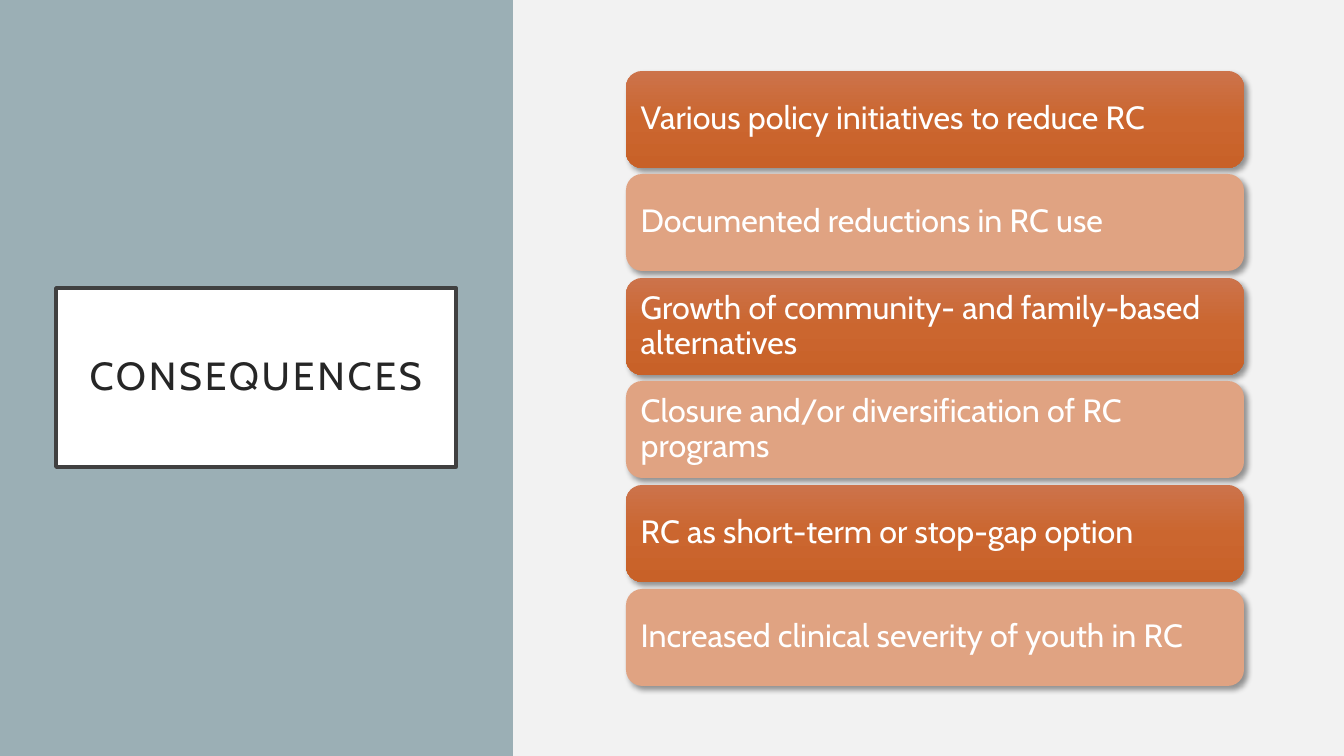
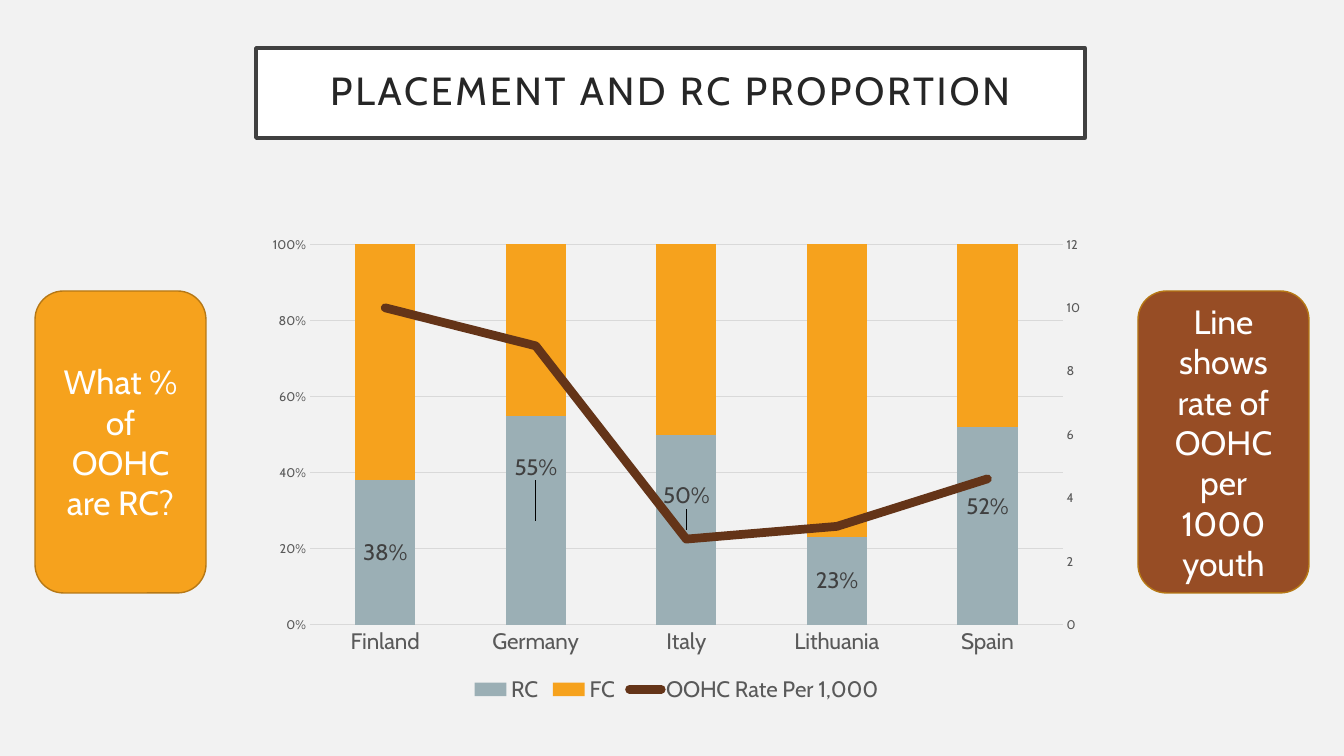
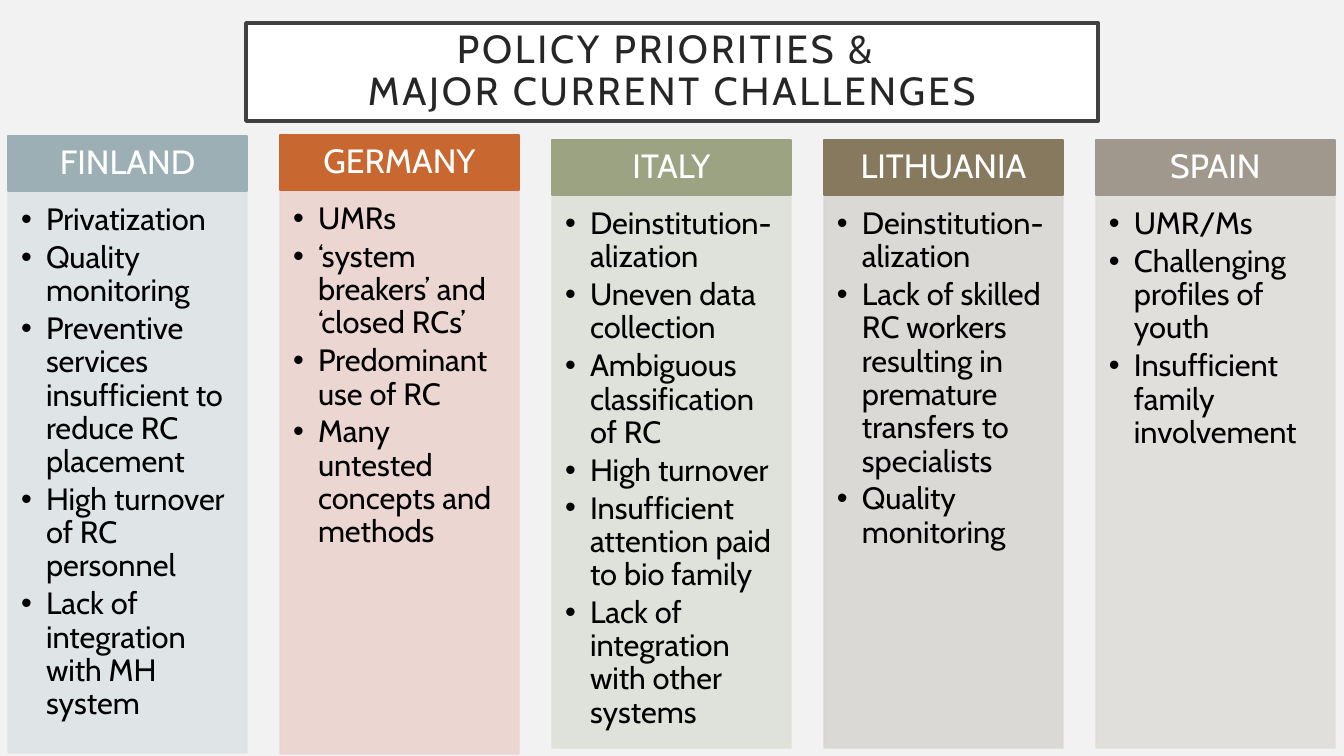
"""Builds three slides on residential care: consequences, placement chart and policy priorities."""
from copy import deepcopy
from dataclasses import dataclass
from typing import NamedTuple, Optional

from lxml.etree import SubElement
from pptx import Presentation
from pptx.chart.data import CategoryChartData
from pptx.dml.color import RGBColor
from pptx.enum.chart import XL_CHART_TYPE, XL_LEGEND_POSITION, XL_MARKER_STYLE, XL_TICK_MARK
from pptx.enum.shapes import MSO_SHAPE
from pptx.enum.text import MSO_ANCHOR, MSO_AUTO_SIZE, PP_ALIGN
from pptx.oxml import parse_xml
from pptx.oxml.ns import nsdecls, qn
from pptx.util import Emu, Pt

SLIDE_WIDTH, SLIDE_HEIGHT = 1344, 756
EMU_PER_PX = 12192000 / SLIDE_WIDTH


@dataclass(frozen=True)
class Theme:
    font: str = "Cabin"
    background: str = "F2F2F2"
    white: str = "FFFFFF"
    black: str = "000000"
    title_text: str = "262626"
    title_line: str = "404040"
    slate: str = "9BAFB5"
    amber: str = "F6A21D"
    amber_line: str = "B67815"
    rust: str = "974D25"
    brown: str = "643418"
    peach: str = "E0A382"
    axis_text: str = "595959"
    grid: str = "D9D9D9"
    card_gradient: tuple = ((0, "CC734B"), (0.5, "CB662F"), (1, "C86128"))
    title_size: int = 28
    card_size: int = 23
    heading_size: int = 24
    list_size: int = 22
    label_size: int = 16
    chart_size: int = 10
    tick_size: int = 9


THEME = Theme()


class Area(NamedTuple):
    left: int
    top: int
    width: int
    height: int


class Insets(NamedTuple):
    left: int = 10
    top: int = 5
    right: int = 10
    bottom: int = 5


class Callout(NamedTuple):
    left: int
    color: str
    text: str


class Country(NamedTuple):
    name: str
    color: str
    tint: str
    top: int
    bottom: int
    issues: tuple


class LabelShift(NamedTuple):
    point: int
    x: float
    y: float


CONSEQUENCES = (
    "Various policy initiatives to reduce RC",
    "Documented reductions in RC use",
    "Growth of community- and family-based alternatives",
    "Closure and/or diversification of RC programs",
    "RC as short-term or stop-gap option",
    "Increased clinical severity of youth in RC",
)

CALLOUTS = (
    Callout(35, THEME.amber, "What % of OOHC are RC?"),
    Callout(1138, THEME.rust, "Line shows rate of OOHC per 1000 youth"),
)

LABEL_SHIFTS = (LabelShift(1, 0, -0.11), LabelShift(2, 0, -0.07), LabelShift(4, 0, -0.04))

COUNTRIES = (
    Country("Finland", THEME.slate, "DEE3E5", 136, 753, (
        "Privatization",
        "Quality monitoring",
        "Preventive services insufficient to reduce RC placement",
        "High turnover of RC personnel",
        "Lack of integration with MH system",
    )),
    Country("Germany", "C96731", "EBD3CE", 135, 754, (
        "UMRs",
        "‘system breakers’ and ‘closed RCs’",
        "Predominant use of RC",
        "Many untested concepts and methods",
    )),
    Country("Italy", "9CA383", "DEE0D9", 140, 748, (
        "Deinstitution-alization",
        "Uneven data collection",
        "Ambiguous classification of RC",
        "High turnover",
        "Insufficient attention paid to bio family",
        "Lack of integration with other systems",
    )),
    Country("Lithuania", "87795D", "D9D7D2", 140, 748, (
        "Deinstitution-alization",
        "Lack of skilled RC workers resulting in premature transfers to specialists",
        "Quality monitoring",
    )),
    Country("Spain", "A0988C", "DFDDDA", 140, 748, (
        "UMR/Ms",
        "Challenging profiles of youth",
        "Insufficient family involvement",
    )),
)


def px(length: int) -> Emu:
    return Emu(round(length * EMU_PER_PX))


def rgb(color: str) -> RGBColor:
    return RGBColor.from_string(color)


def spread(first: int, last: int, count: int) -> list[int]:
    return [first + (last - first) * step // (count - 1) for step in range(count)]


def place(box, area: Area) -> None:
    box.left, box.top, box.width, box.height = map(px, area)


def paint(box, fill: str, line: Optional[str] = None, width: float = 1) -> None:
    box.fill.solid()
    box.fill.fore_color.rgb = rgb(fill)
    if line is None:
        box.line.fill.background()
    else:
        box.line.color.rgb = rgb(line)
        box.line.width = Pt(width)


def style_font(font, size: float, color: str) -> None:
    font.name = THEME.font
    font.size = Pt(size)
    font.color.rgb = rgb(color)


def write(box, text: str, size: float, color: str, align=PP_ALIGN.CENTER,
          anchor=MSO_ANCHOR.MIDDLE, insets: Insets = Insets(), spacing: float = 0.9) -> None:
    frame = box.text_frame
    frame.text = text
    frame.word_wrap = True
    frame.auto_size = MSO_AUTO_SIZE.NONE
    frame.vertical_anchor = anchor
    frame.margin_left, frame.margin_top, frame.margin_right, frame.margin_bottom = map(px, insets)
    for para in frame.paragraphs:
        para.alignment = align
        para.line_spacing = spacing
        para.space_before = Pt(0)
        for span in para.runs:
            style_font(span.font, size, color)


def add_box(page, kind, area: Area):
    box = page.shapes.add_shape(kind, *map(px, area))
    box.shadow.inherit = False
    return box


def add_page(deck, layout, title: str, area: Area, side_inset: int = 20):
    page = deck.slides.add_slide(layout)
    box = page.shapes.title
    place(box, area)
    paint(box, THEME.white, THEME.title_line, 2.5)
    write(box, title, THEME.title_size, THEME.title_text,
          insets=Insets(side_inset, 20, side_inset, 20))
    for properties in box.element.iter(qn("a:rPr")):
        properties.set("spc", "200")
    return page


def shade_card(card) -> None:
    card.fill.gradient()
    card.fill.gradient_angle = 270
    stops = card.element.spPr.find(".//" + qn("a:gsLst"))
    stops.append(deepcopy(stops[0]))
    for stop, (position, color) in zip(card.fill.gradient_stops, THEME.card_gradient):
        stop.position = position
        stop.color.rgb = rgb(color)


def cast_shadow(card) -> None:
    effects = card.element.spPr.find(qn("a:effectLst"))
    effects.append(parse_xml(
        f'<a:outerShdw {nsdecls("a")} blurRad="50800" dist="38100" dir="2700000" rotWithShape="0">'
        '<a:srgbClr val="000000"><a:alpha val="40000"/></a:srgbClr></a:outerShdw>'))


def build_consequences(deck) -> None:
    page = add_page(deck, deck.slide_layouts[5], "CONSEQUENCES", Area(56, 288, 400, 179), 30)
    panel = add_box(page, MSO_SHAPE.RECTANGLE, Area(0, 0, 513, SLIDE_HEIGHT))
    paint(panel, THEME.slate)
    page.shapes.title.element.addprevious(panel.element)
    tops = spread(71, 589, len(CONSEQUENCES))
    for row, (top, text) in enumerate(zip(tops, CONSEQUENCES)):
        card = add_box(page, MSO_SHAPE.ROUNDED_RECTANGLE, Area(626, top, 618, 97))
        paint(card, THEME.peach)
        if row % 2 == 0:
            shade_card(card)
        cast_shadow(card)
        write(card, text, THEME.card_size, THEME.white, PP_ALIGN.LEFT)


def set_value(parent, tag: str, value: str) -> None:
    parent.find(".//" + qn(tag)).set("val", value)


def drop(parent, tag: str) -> None:
    for child in parent.findall(qn(tag)):
        parent.remove(child)


def add_rate_line(chart) -> None:
    plot_area = chart.element.find(".//" + qn("c:plotArea"))
    bars = plot_area.find(qn("c:barChart"))
    rate = bars.findall(qn("c:ser"))[-1]
    drop(rate, "c:invertIfNegative")
    category_id, value_id = "5001", "5002"
    line_plot = parse_xml(
        f'<c:lineChart {nsdecls("c")}><c:grouping val="standard"/><c:varyColors val="0"/>'
        f'<c:marker val="1"/><c:axId val="{category_id}"/><c:axId val="{value_id}"/></c:lineChart>')
    line_plot.insert(2, rate)
    bars.addnext(line_plot)

    left_axis = plot_area.find(qn("c:valAx"))
    right_axis = deepcopy(left_axis)
    drop(right_axis, "c:majorGridlines")
    hidden_axis = deepcopy(plot_area.find(qn("c:catAx")))
    left_axis.addnext(right_axis)
    right_axis.addnext(hidden_axis)
    for tag, value in (("c:axId", value_id), ("c:crossAx", category_id), ("c:axPos", "r"),
                       ("c:crosses", "max"), ("c:max", "12"), ("c:majorUnit", "2")):
        set_value(right_axis, tag, value)
    right_axis.find(qn("c:numFmt")).set("formatCode", "General")
    for tag, value in (("c:axId", category_id), ("c:crossAx", value_id), ("c:delete", "1")):
        set_value(hidden_axis, tag, value)

    series = chart.plots[1].series[0]
    series.smooth = False
    series.marker.style = XL_MARKER_STYLE.NONE
    series.format.line.color.rgb = rgb(THEME.brown)
    series.format.line.width = Pt(6.25)
    line_plot.find(".//" + qn("a:ln")).set("cap", "rnd")


def label_shares(chart, series) -> None:
    labels = series.data_labels
    labels.show_value = True
    labels.number_format = "0%"
    labels.number_format_is_linked = False
    style_font(labels.font, THEME.label_size, THEME.title_line)
    for shift in LABEL_SHIFTS:
        font = series.points[shift.point].data_label.font
        style_font(font, THEME.label_size, THEME.title_line)
    for shift, label in zip(LABEL_SHIFTS, list(chart.element.iter(qn("c:dLbl")))):
        label.find(qn("c:idx")).addnext(parse_xml(
            f'<c:layout {nsdecls("c")}><c:manualLayout><c:x val="{shift.x}"/>'
            f'<c:y val="{shift.y}"/></c:manualLayout></c:layout>'))


def format_axes(chart) -> None:
    for axis, size in ((chart.category_axis, THEME.label_size), (chart.value_axis, THEME.tick_size)):
        axis.major_tick_mark = XL_TICK_MARK.NONE
        axis.minor_tick_mark = XL_TICK_MARK.NONE
        style_font(axis.tick_labels.font, size, THEME.axis_text)
    values = chart.value_axis
    values.minimum_scale, values.maximum_scale, values.major_unit = 0, 1, 0.2
    values.tick_labels.number_format = "0%"
    values.tick_labels.number_format_is_linked = False
    values.format.line.fill.background()
    values.has_major_gridlines = True
    for line in (values.major_gridlines.format.line, chart.category_axis.format.line):
        line.color.rgb = rgb(THEME.grid)
        line.width = Pt(0.75)


def add_placement_chart(page) -> None:
    data = CategoryChartData()
    data.categories = [country.name for country in COUNTRIES]
    data.add_series("RC", (0.38, 0.55, 0.5, 0.23, 0.52), "0%")
    data.add_series("FC", (0.62, 0.45, 0.5, 0.77, 0.48), "0%")
    data.add_series("OOHC Rate Per 1,000", (10, 8.8, 2.7, 3.1, 4.6))
    area = Area(256, 227, 841, 480)
    chart = page.shapes.add_chart(XL_CHART_TYPE.COLUMN_STACKED, *map(px, area), data).chart
    chart.has_title = False
    style_font(chart.font, THEME.chart_size, THEME.black)
    chart.has_legend = True
    chart.legend.position = XL_LEGEND_POSITION.BOTTOM
    chart.legend.include_in_layout = False
    style_font(chart.legend.font, THEME.label_size, THEME.axis_text)
    format_axes(chart)
    add_rate_line(chart)
    bars = chart.plots[0]
    bars.gap_width, bars.overlap, bars.vary_by_categories = 150, 100, False
    for series, color in zip(bars.series, (THEME.slate, THEME.amber)):
        series.format.fill.solid()
        series.format.fill.fore_color.rgb = rgb(color)
    label_shares(chart, bars.series[0])


def build_placement(deck) -> None:
    page = add_page(deck, deck.slide_layouts[5], "PLACEMENT AND RC PROPORTION",
                    Area(256, 48, 829, 90))
    for callout in CALLOUTS:
        box = add_box(page, MSO_SHAPE.ROUNDED_RECTANGLE, Area(callout.left, 291, 171, 302))
        paint(box, callout.color, THEME.amber_line)
        write(box, callout.text, THEME.heading_size, THEME.white, spacing=1.0)
    add_placement_chart(page)


def extend_layout(layout, count: int) -> None:
    body = next(box for box in layout.placeholders if box.placeholder_format.idx == 1)
    for extra in range(count - 1):
        clone = deepcopy(body.element)
        clone.find(".//" + qn("p:cNvPr")).set("id", str(50 + extra))
        clone.find(".//" + qn("p:ph")).set("idx", str(20 + extra))
        body.element.addnext(clone)


def add_bullets(box) -> None:
    for para in box.text_frame.paragraphs:
        para.space_after = Pt(3.3)
        properties = para._p.get_or_add_pPr()
        properties.set("marL", str(px(25)))
        properties.set("indent", str(px(-25)))
        SubElement(properties, qn("a:buFont")).set("typeface", "Arial")
        SubElement(properties, qn("a:buChar")).set("char", "•")


def build_priorities(deck) -> None:
    layout = deck.slide_layouts[1]
    extend_layout(layout, len(COUNTRIES))
    page = add_page(deck, layout, "POLICY PRIORITIES & \vMAJOR CURRENT CHALLENGES",
                    Area(246, 23, 852, 98))
    bodies = [box for box in page.placeholders if box.placeholder_format.idx > 0]
    width, heading_height = 239, 55
    for left, country, body in zip(spread(8, 1096, len(COUNTRIES)), COUNTRIES, bodies):
        heading = add_box(page, MSO_SHAPE.RECTANGLE, Area(left, country.top, width, heading_height))
        paint(heading, country.color, country.color)
        write(heading, country.name.upper(), THEME.heading_size, THEME.white,
              insets=Insets(19, 11, 19, 11))
        body_top = country.top + heading_height
        place(body, Area(left, body_top, width, country.bottom - body_top))
        paint(body, country.tint, country.tint)
        for color in list(body.element.spPr.iter(qn("a:srgbClr"))):
            SubElement(color, qn("a:alpha")).set("val", "90000")
        write(body, "\n".join(country.issues), THEME.list_size, THEME.black, PP_ALIGN.LEFT,
              MSO_ANCHOR.TOP, Insets(13, 13, 17, 19))
        add_bullets(body)


def main() -> None:
    deck = Presentation()
    deck.slide_width, deck.slide_height = px(SLIDE_WIDTH), px(SLIDE_HEIGHT)
    backdrop = deck.slide_master.background.fill
    backdrop.solid()
    backdrop.fore_color.rgb = rgb(THEME.background)
    build_consequences(deck)
    build_placement(deck)
    build_priorities(deck)
    deck.save("out.pptx")


if __name__ == "__main__":
    main()
